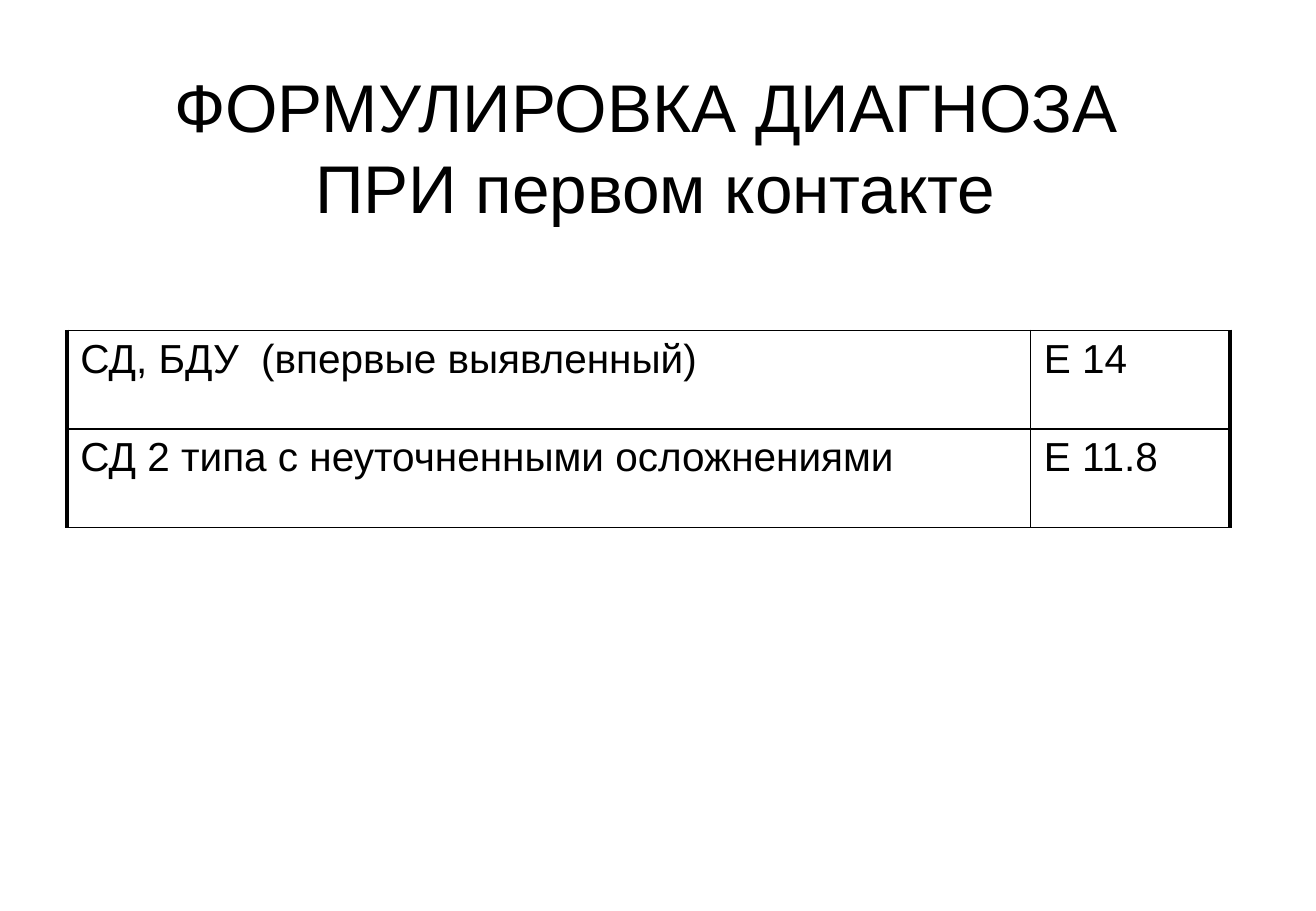
"""Build a slide that lists diagnosis wordings with their codes."""
from dataclasses import dataclass

from lxml import etree
from pptx import Presentation
from pptx.dml.color import RGBColor
from pptx.enum.text import MSO_ANCHOR, PP_ALIGN
from pptx.oxml.ns import qn
from pptx.util import Cm, Pt

MIDDLE = MSO_ANCHOR.MIDDLE
TOP = MSO_ANCHOR.TOP
CENTER = PP_ALIGN.CENTER
LEFT = PP_ALIGN.LEFT

BLACK = "000000"
WHITE = "FFFFFF"
FONT = "Arial"
BLANK_LAYOUT = 6
THIN, THICK = 1, 2.25

TITLE = "ФОРМУЛИРОВКА ДИАГНОЗА \vПРИ первом контакте"
COLUMN_WIDTHS = (20.14, 4.17)
ROW_HEIGHT = 2.06


@dataclass(frozen=True)
class Diagnosis:
    wording: str
    code: str


DIAGNOSES = (
    Diagnosis("СД, БДУ  (впервые выявленный)", "Е 14"),
    Diagnosis("СД 2 типа с неуточненными осложнениями", "Е 11.8"),
)


def color(value: str) -> RGBColor:
    return RGBColor.from_string(value)


def set_attributes(target, values: dict) -> None:
    for name, value in values.items():
        setattr(target, name, value)


def write_text(text_frame, text: str, size: float, alignment) -> None:
    text_frame.text = text
    paragraph = text_frame.paragraphs[0]
    paragraph.alignment = alignment
    for run in paragraph.runs:
        set_attributes(run.font, {"name": FONT, "size": Pt(size), "bold": False})
        run.font.color.rgb = color(BLACK)


def add_border(cell, side: str, width: float) -> None:
    properties = cell._tc.get_or_add_tcPr()
    line = etree.SubElement(properties, qn(f"a:ln{side}"), w=str(Pt(width)))
    fill = etree.SubElement(line, qn("a:solidFill"))
    etree.SubElement(fill, qn("a:srgbClr"), val=BLACK)


def add_title(slide) -> None:
    shape = slide.shapes.add_textbox(Cm(1.19), Cm(1.52), Cm(25.02), Cm(3.07))
    set_attributes(shape.text_frame, {"word_wrap": True, "vertical_anchor": MIDDLE})
    write_text(shape.text_frame, TITLE, 40, CENTER)


def fill_cell(cell, text: str, borders: dict[str, float]) -> None:
    set_attributes(cell, {
        "margin_left": Cm(0.28), "margin_right": Cm(0.28),
        "margin_top": Cm(0.13), "margin_bottom": Cm(0.13),
        "vertical_anchor": TOP,
    })
    write_text(cell.text_frame, text, 24, LEFT)
    for side, width in borders.items():
        add_border(cell, side, width)
    cell.fill.solid()
    cell.fill.fore_color.rgb = color(WHITE)


def add_diagnosis_table(slide) -> None:
    row_count, column_count = len(DIAGNOSES), len(COLUMN_WIDTHS)
    table = slide.shapes.add_table(
        row_count, column_count, Cm(1.4), Cm(6.91),
        Cm(sum(COLUMN_WIDTHS)), Cm(ROW_HEIGHT * row_count),
    ).table
    set_attributes(table, {"first_row": False, "horz_banding": False})
    for column, width in zip(table.columns, COLUMN_WIDTHS):
        column.width = Cm(width)
    for row, diagnosis in zip(table.rows, DIAGNOSES):
        row.height = Cm(ROW_HEIGHT)
        wording_cell, code_cell = row.cells
        fill_cell(wording_cell, diagnosis.wording,
                  {"L": THICK, "R": THIN, "T": THIN, "B": THIN})
        fill_cell(code_cell, diagnosis.code,
                  {"L": THIN, "R": THICK, "T": THIN, "B": THIN})


def main() -> None:
    presentation = Presentation()
    set_attributes(presentation, {"slide_width": Cm(27.51), "slide_height": Cm(19.05)})
    slide = presentation.slides.add_slide(presentation.slide_layouts[BLANK_LAYOUT])
    add_title(slide)
    add_diagnosis_table(slide)
    presentation.save("out.pptx")


if __name__ == "__main__":
    main()
